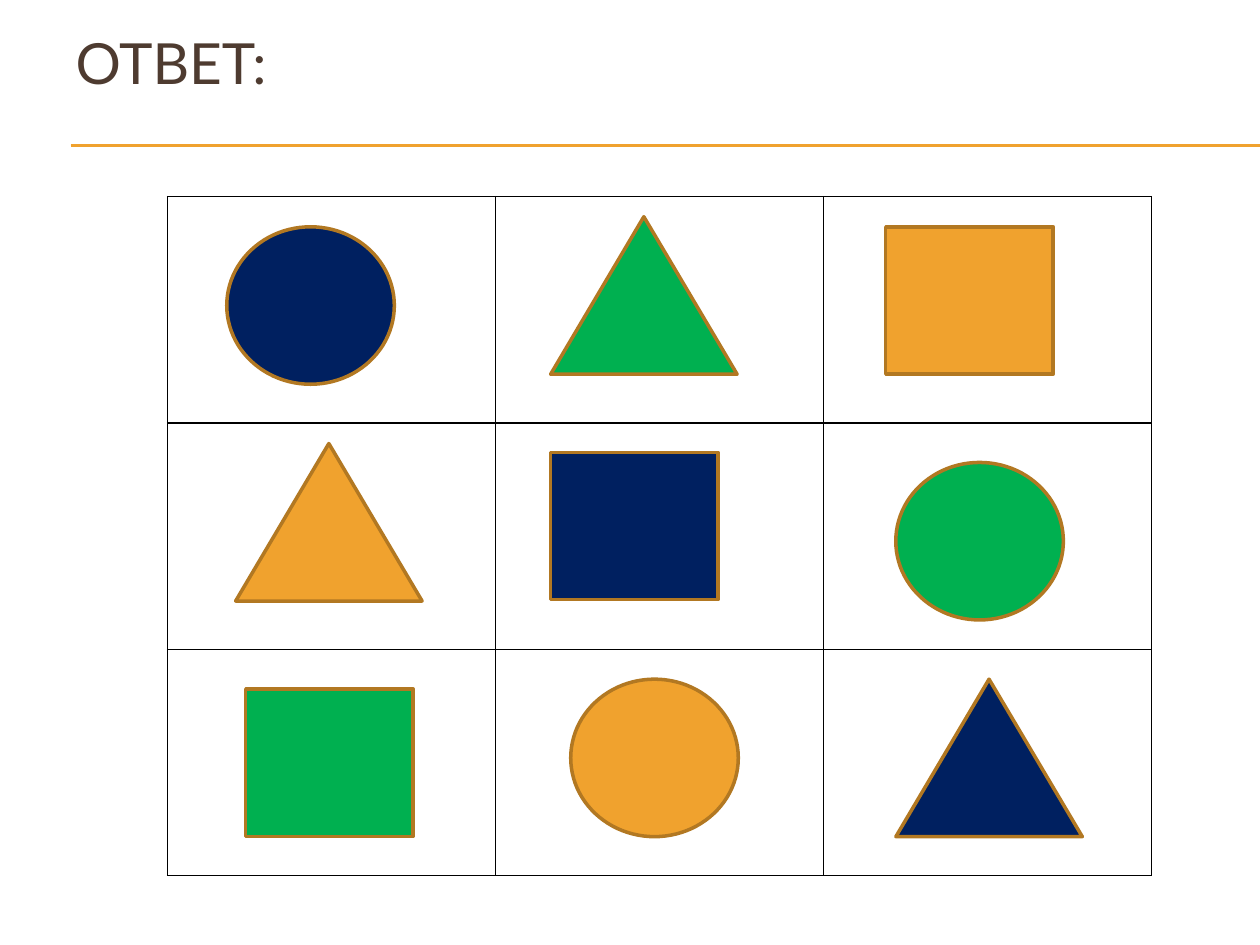
"""Build the answer slide: a three by three grid of coloured figures."""
from lxml.etree import SubElement as Sub
from pptx import Presentation
from pptx.dml.color import RGBColor as RGB
from pptx.enum.shapes import MSO_CONNECTOR as Link, MSO_SHAPE as Form
from pptx.enum.text import MSO_ANCHOR as Anchor, PP_ALIGN as Align
from pptx.oxml.ns import qn
from pptx.util import Inches, Pt

COLORS = {
    "navy": "002060",
    "green": "00B050",
    "gold": "F0A22E",
    "edge": "B27822",
    "title": "4E3B30",
    "grid": "000000",
}
FORMS = {
    "circle": (Form.OVAL, 1.33, 1.25),
    "triangle": (Form.ISOSCELES_TRIANGLE, 1.48, 1.25),
    "square": (Form.RECTANGLE, 1.33, 1.17),
}
FIGURES = [
    ("circle", "navy", 1.8, 1.8),
    ("triangle", "green", 4.37, 1.72),
    ("square", "gold", 7.03, 1.8),
    ("triangle", "gold", 1.87, 3.52),
    ("square", "navy", 4.37, 3.59),
    ("circle", "green", 7.11, 3.67),
    ("square", "green", 1.95, 5.47),
    ("circle", "gold", 4.53, 5.39),
    ("triangle", "navy", 7.11, 5.39),
]


def color(name):
    return RGB.from_string(COLORS[name])


def border(cell):
    props = cell._tc.get_or_add_tcPr()
    for place, side in enumerate(("lnL", "lnR", "lnT", "lnB")):
        line = Sub(props, qn(f"a:{side}"), w=str(Pt(1)))
        fill = Sub(line, qn("a:solidFill"))
        Sub(fill, qn("a:srgbClr"), val=COLORS["grid"])
        props.insert(place, line)


deck = Presentation()
deck.slide_width, deck.slide_height = Inches(10), Inches(7.5)
slide = deck.slides.add_slide(deck.slide_layouts[5])
shapes = slide.shapes

for y in (1.15, 1.16):
    rule = shapes.add_connector(
        Link.STRAIGHT, Inches(0.56), Inches(y), Inches(10), Inches(y))
    rule.line.color.rgb = color("gold")
    rule.line.width = Pt(0.75)
    Sub(rule._element.spPr, qn("a:effectLst"))

title = shapes.title
title.left, title.top = Inches(0.5), Inches(0.03)
title.width, title.height = Inches(9.5), Inches(0.92)
frame = title.text_frame
frame.text = "ОТВЕТ:"
frame.vertical_anchor = Anchor.MIDDLE
para = frame.paragraphs[0]
para.alignment = Align.LEFT
font = para.runs[0].font
font.name, font.size = "Lato", Pt(32.4)
font.color.rgb = color("title")

table = shapes.add_table(
    3, 3, Inches(1.33), Inches(1.56), Inches(7.81), Inches(5.39)).table
table.first_row = table.horz_banding = False
for cell in table.iter_cells():
    cell.fill.background()
    border(cell)

for kind, tint, x, y in FIGURES:
    form, width, height = FORMS[kind]
    figure = shapes.add_shape(
        form, Inches(x), Inches(y), Inches(width), Inches(height))
    figure.shadow.inherit = False
    figure.fill.solid()
    figure.fill.fore_color.rgb = color(tint)
    figure.line.color.rgb = color("edge")
    figure.line.width = Pt(2)

deck.save("out.pptx")
